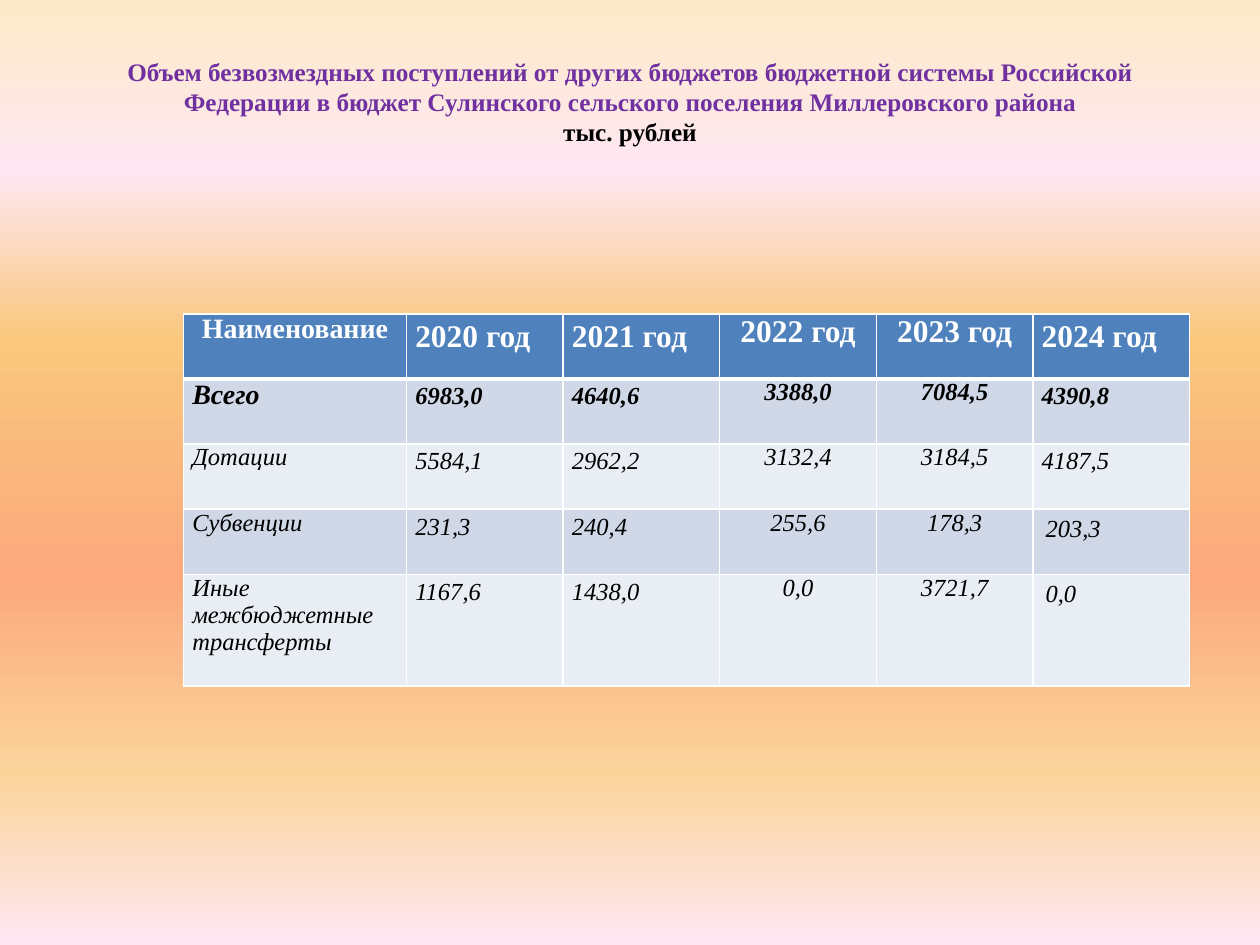
from lxml.etree import SubElement
from pptx import Presentation
from pptx.dml.color import RGBColor
from pptx.enum.text import MSO_ANCHOR, PP_ALIGN
from pptx.oxml.ns import qn
from pptx.util import Pt

FONT = "Times New Roman"
STOPS = [(0, "FBEAC7"), (18, "FEE7F2"), (36, "FAC77D"),
         (61, "FBA97D"), (82, "FBD49C"), (100, "FEE7F2")]
ROWS = [
    ["Наименование", "2020 год", "2021 год", "2022 год", "2023 год", "2024 год"],
    ["Всего", "6983,0", "4640,6", "3388,0", "7084,5", "4390,8"],
    ["Дотации", "5584,1", "2962,2", "3132,4", "3184,5", "4187,5"],
    ["Субвенции", "231,3", "240,4", "255,6", "178,3", "203,3"],
    ["Иные межбюджетные трансферты", "1167,6", "1438,0", "0,0", "3721,7", "0,0"],
]
TITLE = ("Объем безвозмездных поступлений от других бюджетов бюджетной системы Российской "
         "Федерации в бюджет Сулинского сельского поселения Миллеровского района")
COL_WIDTHS = [127.4] + [89.5] * 5
ROW_HEIGHTS = [37.2] * 4 + [63.9]


def rgb(value):
    return RGBColor.from_string(value)


def add_text(p, text, size=14, color="000000", bold=False, italic=False, align=None, spacing=None):
    r = p.add_run()
    r.text = text
    r.font.name, r.font.size = FONT, Pt(size)
    r.font.bold, r.font.italic = bold, italic
    r.font.color.rgb = rgb(color)
    if align is not None:
        p.alignment = align
    if spacing:
        p.line_spacing = spacing


class SlideBuilder:
    """Hold the table style and the slide being built."""
    header, bands, white = "4F81BD", ("E9EDF4", "D0D8E8"), "FFFFFF"

    def __init__(self, prs):
        self.s = prs.slides.add_slide(prs.slide_layouts[5])

    def background(self, stops):
        fill = self.s.background.fill
        fill.gradient()
        fill.gradient_angle = 270
        gs_list = next(self.s.element.iter(qn("a:gsLst")))
        for gs in list(gs_list):
            gs_list.remove(gs)
        for pos, color in stops:
            gs = SubElement(gs_list, qn("a:gs"), pos=str(pos * 1000))
            SubElement(gs, qn("a:srgbClr"), val=color)

    def title(self, text, unit):
        sp = self.s.shapes.title
        sp.left, sp.top, sp.width, sp.height = Pt(36), Pt(21.6), Pt(648), Pt(90)
        tf = sp.text_frame
        tf.word_wrap = True
        tf.vertical_anchor = MSO_ANCHOR.MIDDLE
        tf.margin_bottom = Pt(21)
        p = tf.paragraphs[0]
        add_text(p, text, size=14.4, color="7030A0", bold=True, align=PP_ALIGN.CENTER)
        p.add_line_break()
        add_text(p, unit, size=14.4, bold=True)

    def borders(self, cell, top, bottom):
        tc_pr = cell._tc.get_or_add_tcPr()
        for side, width in (("L", 1), ("R", 1), ("T", top), ("B", bottom)):
            ln = SubElement(tc_pr, qn(f"a:ln{side}"), w=str(Pt(width)))
            SubElement(SubElement(ln, qn("a:solidFill")), qn("a:srgbClr"), val=self.white)

    def cell(self, cell, text, row, col):
        is_header, is_total = row == 0, row == 1
        self.borders(cell, 3 if is_total else 1, 3 if is_header else 1)
        cell.fill.solid()
        cell.fill.fore_color.rgb = rgb(self.header if is_header else self.bands[row % 2])
        roomy = col == 5 and row >= 3
        cell.margin_left = cell.margin_right = Pt(7.2 if roomy else 5)
        cell.margin_top = cell.margin_bottom = Pt(3.6 if roomy else 0)
        centered = col in (3, 4) or (is_header and col == 0)
        if is_header:
            size = 18 if col else 16
        else:
            size = 16 if is_total and col == 0 else 14
        add_text(cell.text_frame.paragraphs[0], text, size=size,
                 color=self.white if is_header else "000000",
                 bold=is_header or is_total, italic=not is_header,
                 align=PP_ALIGN.CENTER if centered else PP_ALIGN.LEFT,
                 spacing=1.15 if col in (1, 2, 5) and not roomy else None)

    def table(self, rows, left, top, widths, heights):
        table = self.s.shapes.add_table(len(rows), len(widths), Pt(left), Pt(top),
                                        Pt(sum(widths)), Pt(sum(heights))).table
        for column, width in zip(table.columns, widths):
            column.width = Pt(width)
        for i, (values, height) in enumerate(zip(rows, heights)):
            table.rows[i].height = Pt(height)
            for j, text in enumerate(values):
                self.cell(table.cell(i, j), text, i, j)


def main():
    prs = Presentation()
    prs.slide_width, prs.slide_height = Pt(720), Pt(540)
    slide = SlideBuilder(prs)
    slide.background(STOPS)
    slide.title(TITLE, "тыс. рублей")
    slide.table(ROWS, 104.9, 179.4, COL_WIDTHS, ROW_HEIGHTS)
    prs.save("out.pptx")


if __name__ == "__main__":
    main()
